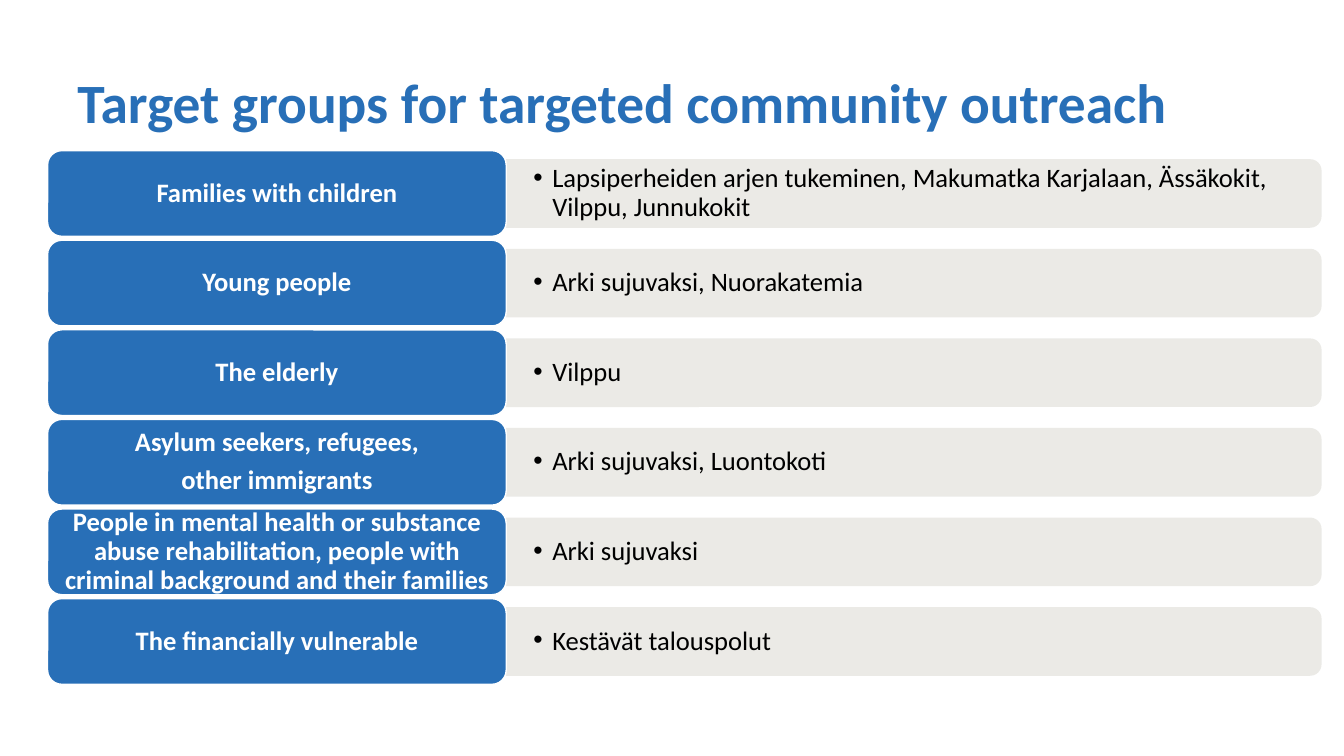
"""Build a slide of target groups and the projects that reach them."""
from dataclasses import dataclass

from lxml.etree import SubElement
from pptx import Presentation
from pptx.dml.color import RGBColor as RGB
from pptx.enum.shapes import MSO_SHAPE as SHAPE
from pptx.enum.text import MSO_ANCHOR as ANCHOR, PP_ALIGN as ALIGN
from pptx.oxml.ns import qn
from pptx.util import Pt


@dataclass(frozen=True)
class Theme:
    font: str = "Calibri"
    blue: RGB = RGB(0x28, 0x6F, 0xB7)
    gray: RGB = RGB(0xE9, 0xE8, 0xE4)
    white: RGB = RGB(255, 255, 255)
    black: RGB = RGB(0, 0, 0)
    head: float = 39.6
    body: float = 19


THEME = Theme()
FIRST, PITCH = 138.2, 64
EDGE, SPLIT = 34, 361.6
BAR_W, BAR_H, PILL_H = 582.4, 49, 61.2
ROWS = [
    ("Families with children",
     "Lapsiperheiden arjen tukeminen, Makumatka Karjalaan, Ässäkokit, Vilppu, Junnukokit"),
    ("Young people", "Arki sujuvaksi, Nuorakatemia"),
    ("The elderly", "Vilppu"),
    ("Asylum seekers, refugees,\nother immigrants", "Arki sujuvaksi, Luontokoti"),
    ("People in mental health or substance abuse rehabilitation, "
     "people with criminal background and their families", "Arki sujuvaksi"),
    ("The financially vulnerable", "Kestävät talouspolut"),
]


def write(shape, text, size, color, bold, align, anchor, inset):
    frame = shape.text_frame
    frame.text = text
    frame.word_wrap = True
    frame.vertical_anchor = anchor
    frame.margin_left = frame.margin_right = Pt(inset[0])
    frame.margin_top = frame.margin_bottom = Pt(inset[1])
    for para in frame.paragraphs:
        para.alignment = align
        para.line_spacing = 0.9
        for run in para.runs:
            font = run.font
            font.name, font.size, font.bold = THEME.font, Pt(size), bold
            font.color.rgb = color
    return frame


def add_box(slide, left, top, width, height):
    return slide.shapes.add_textbox(Pt(left), Pt(top), Pt(width), Pt(height))


def add_form(slide, kind, left, top, width, height, fill):
    form = slide.shapes.add_shape(kind, Pt(left), Pt(top), Pt(width), Pt(height))
    form.shadow.inherit = False
    form.fill.solid()
    form.fill.fore_color.rgb = fill
    return form


def add_bar(slide, mid):
    left = SPLIT + (BAR_W - BAR_H) / 2
    bar = add_form(slide, SHAPE.ROUND_2_SAME_RECTANGLE, left, mid - BAR_W / 2,
                   BAR_H, BAR_W, THEME.gray)
    bar.rotation = 90
    bar.line.fill.background()
    color = bar.fill._xPr.find(qn("a:solidFill"))[0]
    SubElement(color, qn("a:alpha"), val="90000")


def add_list(slide, mid, text):
    box = add_box(slide, SPLIT, mid - 22, 580, 44)
    frame = write(box, text, THEME.body, THEME.black, False,
                  ALIGN.LEFT, ANCHOR.MIDDLE, (19.4, 10))
    for para in frame.paragraphs:
        props = para._p.get_or_add_pPr()
        props.set("marL", str(Pt(13.5)))
        props.set("indent", str(-Pt(13.5)))
        SubElement(props, qn("a:buFont"), typeface="Arial")
        SubElement(props, qn("a:buChar"), char="•")


def add_pill(slide, mid, text):
    pill = add_form(slide, SHAPE.ROUNDED_RECTANGLE, EDGE, mid - PILL_H / 2,
                    SPLIT - EDGE, PILL_H, THEME.blue)
    pill.line.color.rgb = THEME.white
    pill.line.width = Pt(1)
    frame = write(pill, text, THEME.body, THEME.white, True,
                  ALIGN.CENTER, ANCHOR.MIDDLE, (5.8, 2.9))
    for para in frame.paragraphs[:-1]:
        para.space_after = Pt(6.5)


def main():
    deck = Presentation()
    deck.slide_width, deck.slide_height = Pt(960), Pt(540)
    slide = deck.slides.add_slide(deck.slide_layouts[6])
    title = add_box(slide, 48.2, 28.2, 860.4, 72)
    write(title, "Target groups for targeted community outreach", THEME.head,
          THEME.blue, True, ALIGN.LEFT, ANCHOR.BOTTOM, (7.2, 3.6))
    for row, (group, work) in enumerate(ROWS):
        mid = FIRST + row * PITCH
        add_bar(slide, mid)
        add_list(slide, mid, work)
        add_pill(slide, mid, group)
    deck.save("out.pptx")


if __name__ == "__main__":
    main()
